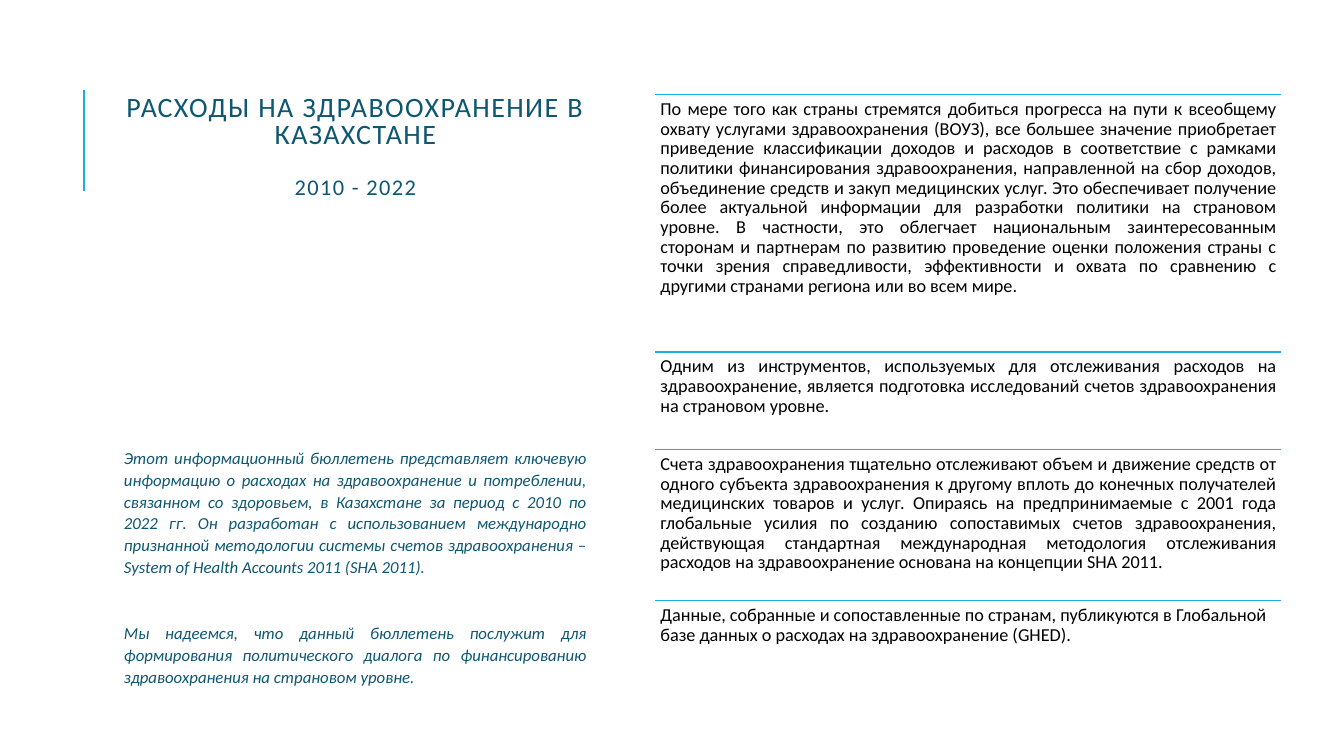
from lxml import etree
from pptx import Presentation, util as u
from pptx.dml.color import RGBColor
from pptx.enum import shapes, text
from pptx.oxml.ns import qn

PX = 9525  # EMU per px, 96 px to the inch
theme = {
    "font": "Calibri",
    "teal": RGBColor.from_string("0E5772"),
    "blue": RGBColor.from_string("1CADE4"),
    "black": RGBColor.from_string("000000"),
    "title": 20, "years": 16, "intro": 12, "point": 13,
}
LEFT, MID, JUST = text.PP_ALIGN.LEFT, text.PP_ALIGN.CENTER, text.PP_ALIGN.JUSTIFY

deck = Presentation()
deck.slide_width, deck.slide_height = 1280 * PX, 720 * PX
slide = deck.slides.add_slide(deck.slide_layouts[6])


def add_rule(x1, y1, x2, y2, width):
    rule = slide.shapes.add_connector(
        shapes.MSO_CONNECTOR.STRAIGHT, x1 * PX, y1 * PX, x2 * PX, y2 * PX)
    rule.line.color.rgb = theme["blue"]
    rule.line.width = u.Pt(width)
    etree.SubElement(rule._element.spPr, qn("a:effectLst"))


def add_text(area, paras, color, align, spacing, inset=10, track=0, italic=False,
             anchor=text.MSO_ANCHOR.TOP):
    """Each paragraph is (words, size, space before in points)."""
    box = slide.shapes.add_textbox(*(n * PX for n in area))
    frame = box.text_frame
    frame.word_wrap = True
    frame.vertical_anchor = anchor
    frame.margin_left = frame.margin_right = inset * PX
    frame.margin_top = frame.margin_bottom = 5 * PX
    for i, (words, size, before) in enumerate(paras):
        para = frame.add_paragraph() if i else frame.paragraphs[0]
        para.alignment, para.line_spacing = align, spacing
        para.space_before = u.Pt(before)
        run = para.add_run()
        run.text = words
        if track:
            run._r.get_or_add_rPr().set("spc", str(track))
        font = para.font
        font.name, font.size = theme["font"], u.Pt(theme[size])
        font.color.rgb, font.italic = color, italic


# Title with its side rule
add_rule(80, 182, 80, 86, 1.5)
add_text((108, 50, 461, 182), [
    ("РАСХОДЫ НА ЗДРАВООХРАНЕНИЕ В КАЗАХСТАНЕ", "title", 0),
    ("2010 - 2022", "years", 20),
], theme["teal"], MID, 0.8, track=100, anchor=text.MSO_ANCHOR.MIDDLE)

# Ruled points on the right
points = [
    (90, JUST, "По мере того как страны стремятся добиться прогресса на пути к всеобщему охвату услугами здравоохранения (ВОУЗ), все большее значение приобретает приведение классификации доходов и расходов в соответствие с рамками политики финансирования здравоохранения, направленной на сбор доходов, объединение средств и закуп медицинских услуг. Это обеспечивает получение более актуальной информации для разработки политики на страновом уровне. В частности, это облегчает национальным заинтересованным сторонам и партнерам по развитию проведение оценки положения страны с точки зрения справедливости, эффективности и охвата по сравнению с другими странами региона или во всем мире."),
    (335, JUST, "Одним из инструментов, используемых для отслеживания расходов на здравоохранение, является подготовка исследований счетов здравоохранения на страновом уровне."),
    (428, JUST, "Счета здравоохранения тщательно отслеживают объем и движение средств от одного субъекта здравоохранения к другому вплоть до конечных получателей медицинских товаров и услуг. Опираясь на предпринимаемые с 2001 года глобальные усилия по созданию сопоставимых счетов здравоохранения, действующая стандартная международная методология отслеживания расходов на здравоохранение основана на концепции SHA 2011."),
    (572, LEFT, "Данные, собранные и сопоставленные по странам, публикуются в Глобальной базе данных о расходах на здравоохранение (GHED)."),
]
ends = [top for top, _, _ in points[1:]] + [679]
for (top, align, words), end in zip(points, ends):
    add_rule(624, top, 1220, top, 1.25)
    add_text((624, top, 596, end - top), [(words, "point", 0)],
             theme["black"], align, 0.9, inset=5)

# Introduction at lower left
add_text((108, 420, 461, 250), [
    ("Этот информационный бюллетень представляет ключевую информацию о расходах на здравоохранение и потреблении, связанном со здоровьем, в Казахстане за период с 2010 по 2022 гг. Он разработан с использованием международно признанной методологии системы счетов здравоохранения – System of Health Accounts 2011 (SHA 2011).", "intro", 6),
    ("Мы надеемся, что данный бюллетень послужит для формирования политического диалога по финансированию здравоохранения на страновом уровне.", "intro", 32),
], theme["teal"], JUST, 1.08, italic=True)

deck.save("out.pptx")
